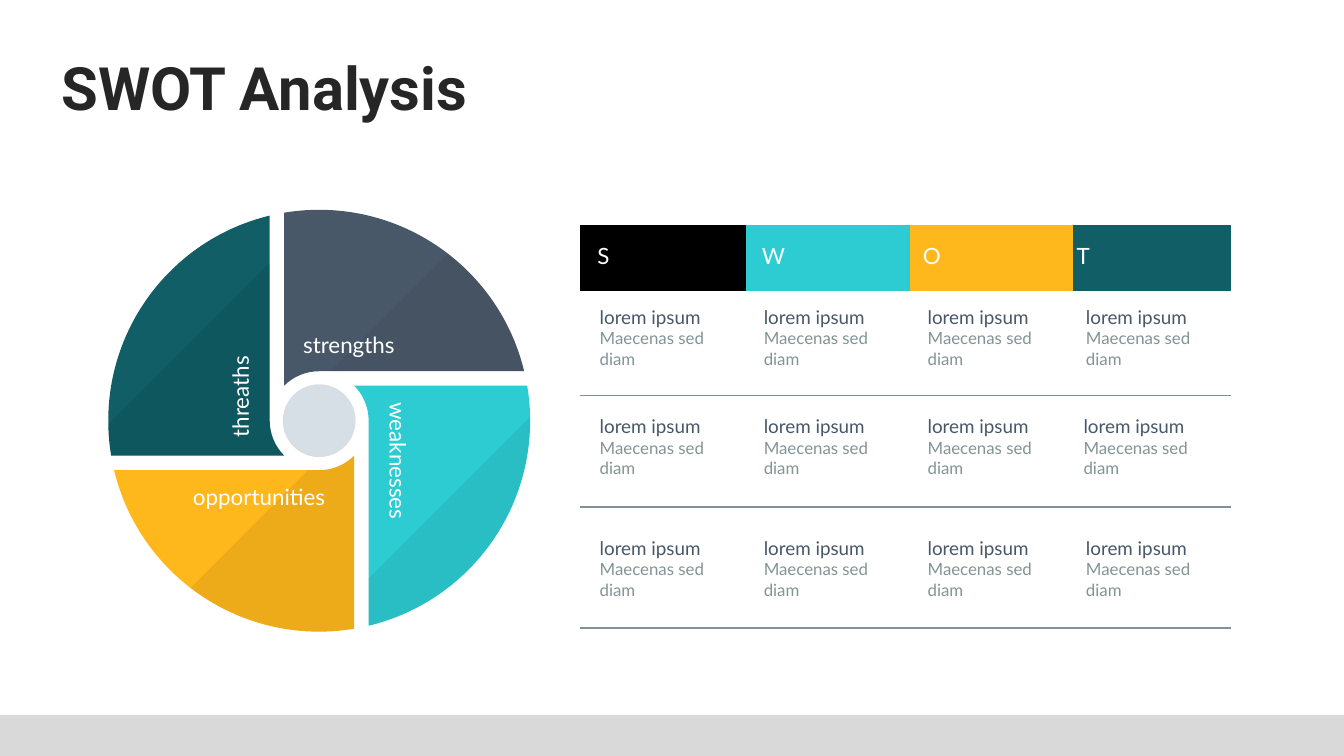
"""Build a SWOT slide with a four-petal wheel and a matching table."""
from dataclasses import dataclass
from math import acos, asin, cos, pi, radians, sin, sqrt, tan

from lxml.etree import SubElement as Sub
from pptx import Presentation
from pptx.dml.color import RGBColor as Rgb
from pptx.enum.shapes import MSO_SHAPE as Kind
from pptx.enum.text import MSO_ANCHOR as Anchor, MSO_AUTO_SIZE as Auto, PP_ALIGN as Align
from pptx.oxml.ns import qn
from pptx.util import Pt

Point = tuple[float, float]
Part = list[Point]
MID_X, MID_Y = 171, 225.4
RIM, HUB, CORE = 113, 26.5, 19.5
EDGE = HUB / sqrt(2)
FIRST, LAST = -acos(-EDGE / RIM), -asin(HUB / RIM)
PLAIN = "{2D5ABB26-0587-4C30-8999-92F81FD0307C}"
WIDTHS = (88.8, 88, 87.2, 84.8)
HEIGHTS = (35.3, 56.2, 59.8, 64.8)


@dataclass
class Petal:
    name: str
    fill: str
    slant: float
    foot: float
    front: bool
    shade: int
    box: tuple[float, float, float, float]
    turn: int = 0


@dataclass
class Head:
    mark: str
    fill: str
    left: float
    top: float = 124.8


@dataclass
class Row:
    top: float
    last: float = 581.8


PETALS = (
    Petal("strengths", "495869", -52.4, 6, False, 5, (161, 172, 98.6, 25.2)),
    Petal("weaknesses", "2DCCD3", -91, 84.5, False, 7, (175, 240.5, 77, 24.5), 90),
    Petal("opportunities", "FFB81C", -52.4, 6, True, 7, (102, 253.4, 82.8, 25.2)),
    Petal("threaths", "115E67", -91, 84.5, True, 7, (90, 184.6, 77, 25.2), 270),
)
HEADS = (
    Head("S", "000000", 318.7, 124.6),
    Head("W", "2DCCD3", 406.8),
    Head("O", "FFB81C", 493),
    Head("T", "115E67", 575.4),
)
ROWS = (Row(163.7), Row(222.2, 580.5), Row(287.5))
LEFTS = (321.3, 409.2, 497)


def tint(code: str) -> Rgb:
    return Rgb.from_string(code)


def paint(shape, code: str, alpha: int = 100) -> None:
    shape.shadow.inherit = False
    shape.line.fill.background()
    shape.fill.solid()
    shape.fill.fore_color.rgb = tint(code)
    if alpha < 100:
        node = shape.fill._xPr.find(".//" + qn("a:srgbClr"))
        Sub(node, qn("a:alpha"), val=str(alpha * 1000))


def style(para, size: float, code: str, face: str = "Lato", bold: bool = False) -> None:
    for run in para.runs:
        font = run.font
        font.size, font.name, font.bold = Pt(size), face, bold
        font.color.rgb = tint(code)


def inset(frame, left: float = 0, right: float = 0) -> None:
    frame.word_wrap, frame.auto_size = True, Auto.NONE
    frame.margin_left, frame.margin_right = Pt(left), Pt(right)
    frame.margin_top = frame.margin_bottom = 0


def label(shapes, text: str, box: tuple, turn: int = 0) -> None:
    shape = shapes.add_textbox(*map(Pt, box))
    shape.rotation = turn
    frame = shape.text_frame
    inset(frame, 1.4, 1.4)
    frame.vertical_anchor = Anchor.MIDDLE
    frame.text = text
    style(frame.paragraphs[0], 12, "FEFEFE")


def note(shapes, left: float, top: float) -> None:
    frame = shapes.add_textbox(Pt(left), Pt(top), Pt(67), Pt(39)).text_frame
    inset(frame)
    frame.text = "lorem ipsum\nMaecenas sed diam"
    first, second = frame.paragraphs
    style(first, 10.1, "495869")
    style(second, 9, "839494")


def spot(size: float, angle: float) -> Point:
    return size * cos(angle), size * sin(angle)


def arc(size: float, start: float, stop: float) -> Part:
    pull = 4 / 3 * tan((stop - start) / 4)
    (x, y), (u, v) = spot(size, start), spot(size, stop)
    return [(x - pull * y, y + pull * x), (u + pull * v, v - pull * u), (u, v)]


def petal_parts() -> list[Part]:
    return [[spot(RIM, FIRST)], arc(RIM, FIRST, -pi / 2), arc(RIM, -pi / 2, LAST),
            [(0, -HUB)], arc(HUB, -pi / 2, -3 * pi / 4)]


def shade_parts(petal: Petal) -> list[Part]:
    slant, foot = radians(petal.slant), [(petal.foot, -HUB)]
    bends = sorted({FIRST, slant, -pi / 2, LAST})
    low, high = (FIRST, slant) if petal.front else (slant, LAST)
    stops = [a for a in bends if low <= a <= high]
    rim = [[spot(RIM, low)]] + [arc(RIM, a, b) for a, b in zip(stops, stops[1:])]
    if petal.front:
        return [foot, [(0, -HUB)], arc(HUB, -pi / 2, -3 * pi / 4)] + rim
    return rim + [foot]


def place(point: Point, turns: int) -> tuple[int, int]:
    x, y = point
    for _ in range(turns):
        x, y = -y, x
    return Pt(MID_X + x), Pt(MID_Y + y)


def trace(shapes, parts: list[Part], turns: int, code: str, alpha: int = 100) -> None:
    spots = [place(point, turns) for part in parts for point in part]
    pen = shapes.build_freeform(*spots[0])
    pen.add_line_segments(spots[1:], close=True)
    shape = pen.convert_to_shape()
    lines = iter(list(shape._element.iter(qn("a:lnTo"))))
    for part in parts[1:]:
        curve = next(lines)
        if len(part) == 3:
            curve.tag = qn("a:cubicBezTo")
            for line in (next(lines), next(lines)):
                curve.append(line[0])
                line.getparent().remove(line)
    paint(shape, code, alpha)


def wheel(shapes) -> None:
    for turns, petal in enumerate(PETALS):
        trace(shapes, petal_parts(), turns, petal.fill)
        trace(shapes, shade_parts(petal), turns, "000000", petal.shade)
    core = (MID_X - CORE, MID_Y - CORE, 2 * CORE, 2 * CORE)
    paint(shapes.add_shape(Kind.OVAL, *map(Pt, core)), "D7DFE6")
    for petal in PETALS:
        label(shapes, petal.name, petal.box, petal.turn)


def rule(cell) -> None:
    line = Sub(cell._tc.get_or_add_tcPr(), qn("a:lnB"), w=str(Pt(1)))
    Sub(Sub(line, qn("a:solidFill")), qn("a:srgbClr"), val="809295")


def grid(shapes) -> None:
    box = (310.8, 120.4, sum(WIDTHS), sum(HEIGHTS))
    table = shapes.add_table(len(HEIGHTS), len(WIDTHS), *map(Pt, box)).table
    table._tbl.tblPr.find(qn("a:tableStyleId")).text = PLAIN
    table.first_row = table.horz_banding = False
    for col, width in zip(table.columns, WIDTHS):
        col.width = Pt(width)
    for row, height in zip(table.rows, HEIGHTS):
        row.height = Pt(height)
    for col, head in enumerate(HEADS):
        fill = table.cell(0, col).fill
        fill.solid()
        fill.fore_color.rgb = tint(head.fill)
        for row in range(1, len(HEIGHTS)):
            rule(table.cell(row, col))
            table.cell(row, col).fill.background()
        label(shapes, head.mark, (head.left, head.top, 72, 24.5))
    for row in ROWS:
        for left in (*LEFTS, row.last):
            note(shapes, left, row.top)


def title(shape) -> None:
    shape.left, shape.top, shape.width, shape.height = map(Pt, (33.1, 28.8, 655.2, 37.4))
    frame = shape.text_frame
    inset(frame)
    frame.vertical_anchor = Anchor.BOTTOM
    frame.text = "SWOT Analysis"
    para = frame.paragraphs[0]
    para.alignment, para.line_spacing = Align.LEFT, 0.9
    style(para, 32, "262626", "Roboto", True)


def main() -> None:
    deck = Presentation()
    deck.slide_width, deck.slide_height = Pt(720), Pt(405)
    shapes = deck.slides.add_slide(deck.slide_layouts[5]).shapes
    title(shapes.title)
    paint(shapes.add_shape(Kind.RECTANGLE, 0, Pt(383), Pt(720), Pt(22)), "D9D9D9")
    wheel(shapes.add_group_shape().shapes)
    grid(shapes)
    deck.save("out.pptx")


if __name__ == "__main__":
    main()
